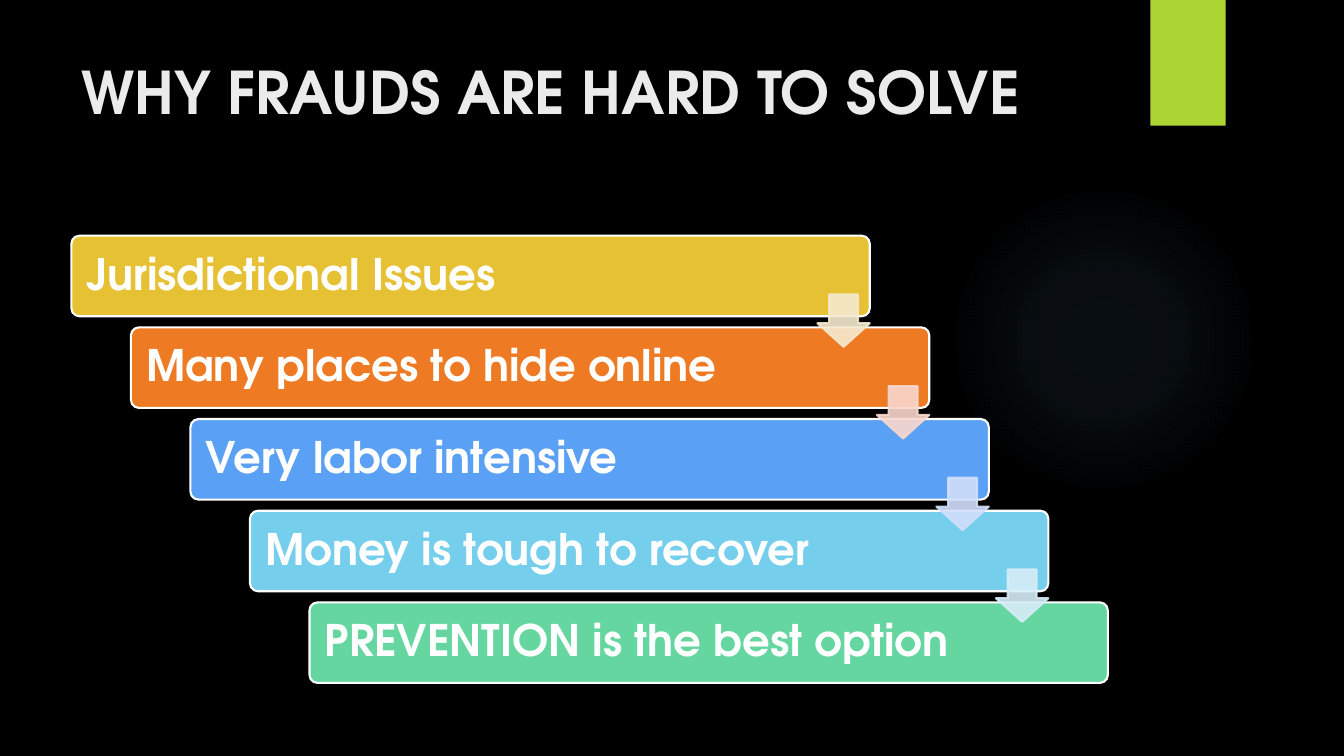
from pptx import Presentation
from pptx.dml.color import RGBColor
from pptx.enum.shapes import MSO_SHAPE
from pptx.enum.text import MSO_ANCHOR, MSO_AUTO_SIZE, PP_ALIGN
from pptx.oxml import parse_xml
from pptx.oxml.ns import nsdecls, qn
from pptx.util import Cm, Pt
from lxml import etree

RECTANGLE = MSO_SHAPE.RECTANGLE
ROUNDED = MSO_SHAPE.ROUNDED_RECTANGLE
DOWN_ARROW = MSO_SHAPE.DOWN_ARROW
OVAL = MSO_SHAPE.OVAL
TOP, MIDDLE = MSO_ANCHOR.TOP, MSO_ANCHOR.MIDDLE
LEFT = PP_ALIGN.LEFT
NO_AUTOFIT = MSO_AUTO_SIZE.NONE

FONT = "TeX Gyre Adventor"
BLACK = RGBColor(0x00, 0x00, 0x00)
WHITE = RGBColor(0xFF, 0xFF, 0xFF)
TITLE_GREY = RGBColor(0xEB, 0xEB, 0xEB)
LIME = RGBColor(0xAC, 0xD4, 0x33)
GLOW_BLUE = RGBColor(0x7A, 0xC4, 0xF0)
YELLOW = RGBColor(0xE6, 0xC1, 0x33)
ORANGE = RGBColor(0xEF, 0x7A, 0x24)
BLUE = RGBColor(0x5A, 0xA0, 0xF5)
SKY = RGBColor(0x75, 0xCE, 0xEC)
GREEN = RGBColor(0x65, 0xD6, 0xA0)
PALE_YELLOW = RGBColor(0xF5, 0xE9, 0xCE)
PALE_ORANGE = RGBColor(0xF9, 0xD7, 0xCD)
PALE_BLUE = RGBColor(0xD2, 0xDF, 0xFB)
PALE_SKY = RGBColor(0xD6, 0xED, 0xF8)

REASONS = [
    ("Jurisdictional Issues", YELLOW),
    ("Many places to hide online", ORANGE),
    ("Very labor intensive", BLUE),
    ("Money is tough to recover", SKY),
    ("PREVENTION is the best option", GREEN),
]
ARROW_COLORS = [PALE_YELLOW, PALE_ORANGE, PALE_BLUE, PALE_SKY]
GLOW_STOPS = [(0, 7), (36, 6), (69, 0)]
STEP_X, STEP_Y = 1.5, 2.31


def add_block(slide, kind, left, top, width, height, fill, outline=None):
    """Add a flat shape, measured in centimetres, with an optional outline."""
    block = slide.shapes.add_shape(kind, Cm(left), Cm(top), Cm(width), Cm(height))
    block.shadow.inherit = False
    block.fill.solid()
    block.fill.fore_color.rgb = fill
    if outline is None:
        block.line.fill.background()
    else:
        block.line.color.rgb = outline
        block.line.width = Pt(1.5)
    return block


def write_text(frame, words, size, color, anchor):
    """Write one bold, left-aligned line into a text frame."""
    frame.word_wrap = True
    frame.auto_size = NO_AUTOFIT
    frame.vertical_anchor = anchor
    paragraph = frame.paragraphs[0]
    paragraph.alignment = LEFT
    run = paragraph.add_run()
    run.text = words
    run.font.name = FONT
    run.font.size = Pt(size)
    run.font.bold = True
    run.font.color.rgb = color
    return paragraph


def add_glow(slide):
    """Add the faint round glow that fades into the background."""
    glow = add_block(slide, OVAL, 23.9, 4.65, 7.82, 7.82, GLOW_BLUE)
    stops = "".join(
        f'<a:gs pos="{position * 1000}"><a:srgbClr val="{GLOW_BLUE}">'
        f'<a:alpha val="{opacity * 1000}"/></a:srgbClr></a:gs>'
        for position, opacity in GLOW_STOPS
    )
    gradient = parse_xml(
        f'<a:gradFill {nsdecls("a")} rotWithShape="1"><a:gsLst>{stops}</a:gsLst>'
        '<a:path path="circle"><a:fillToRect l="50000" t="50000" r="50000" b="50000"/>'
        "</a:path></a:gradFill>"
    )
    properties = glow.element.spPr
    properties.replace(properties.find(qn("a:solidFill")), gradient)


def add_title(slide):
    """Place and format the slide title."""
    title = slide.shapes.title
    title.left, title.top = Cm(1.8), Cm(1.27)
    title.width, title.height = Cm(26.14), Cm(3.89)
    write_text(title.text_frame, "WHY FRAUDS ARE HARD TO SOLVE", 42, TITLE_GREY, TOP)


def add_reason(slide, step, words, color):
    """Add one bar of the staircase with its reason."""
    bar = add_block(slide, ROUNDED, 1.8 + step * STEP_X, 5.94 + step * STEP_Y,
                    20.12, 2.03, color, WHITE)
    bar.adjustments[0] = 0.1
    frame = bar.text_frame
    frame.margin_left = frame.margin_right = Cm(0.33)
    paragraph = write_text(frame, words, 31, WHITE, MIDDLE)
    paragraph.line_spacing = 0.9


def add_step_arrow(slide, step, color):
    """Add the translucent arrow leading from one bar to the next."""
    arrow = add_block(slide, DOWN_ARROW, 20.6 + step * STEP_X, 7.42 + step * STEP_Y,
                      1.32, 1.32, color, color)
    arrow.adjustments[0] = 0.55
    arrow.adjustments[1] = 0.45
    for tint in arrow.element.spPr.iter(qn("a:srgbClr")):
        etree.SubElement(tint, qn("a:alpha")).set("val", "90000")


def main():
    """Build the slide and save it."""
    deck = Presentation()
    deck.slide_width, deck.slide_height = Cm(33.87), Cm(19.05)
    slide = deck.slides.add_slide(deck.slide_layouts[5])
    slide.background.fill.solid()
    slide.background.fill.fore_color.rgb = BLACK
    add_glow(slide)
    add_block(slide, RECTANGLE, 28.99, 0, 1.9, 3.17, LIME)
    add_title(slide)
    for step, (words, color) in enumerate(REASONS):
        add_reason(slide, step, words, color)
    for step, color in enumerate(ARROW_COLORS):
        add_step_arrow(slide, step, color)
    deck.save("out.pptx")


if __name__ == "__main__":
    main()
